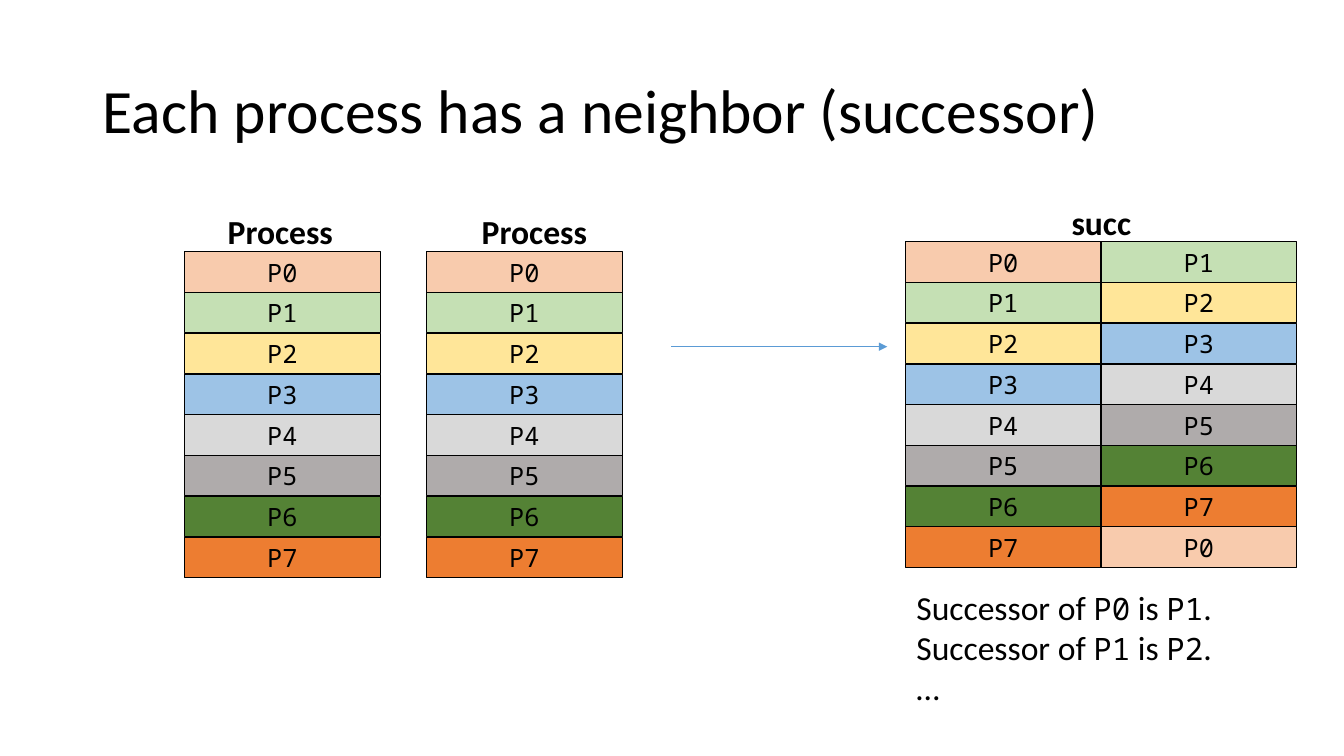
from lxml import etree
from pptx import Presentation
from pptx.dml.color import RGBColor
from pptx.enum import shapes, text
from pptx.oxml import ns
from pptx.util import Inches, Pt

# Content
TITLE = "Each process has a neighbor (successor)"
COLORS = {
    "P0": "F8CBAD", "P1": "C5E0B4", "P2": "FFE699", "P3": "9DC3E6",
    "P4": "D9D9D9", "P5": "AFABAB", "P6": "548235", "P7": "ED7D31",
    "ink": "000000", "arrow": "5B9BD5",
}
PROCESSES = [f"P{number}" for number in range(8)]
SUCCESSORS = PROCESSES[1:] + PROCESSES[:1]
COLUMNS = [  # left, top, names
    (1.83, 2.5, PROCESSES),
    (4.23, 2.5, PROCESSES),
    (8.98, 2.4, PROCESSES),
    (10.92, 2.4, SUCCESSORS),
]
HEADINGS = [  # left, top, width, wording
    (2.16, 2.04, 1.26, "Process"),
    (4.68, 2.04, 1.26, "Process"),
    (10.53, 1.95, 0.8, "succ"),
]
EXAMPLES = [
    ["Successor of ", "P0", " is ", "P1", "."],
    ["Successor of ", "P1", " is ", "P2", "."],
    ["…"],
]
SANS, MONO = "Calibri", "Noto Sans Mono"
CELL_WIDTH, CELL_HEIGHT, ROW_STEP = 1.94, 0.4, 0.404


def color(name):
    return RGBColor.from_string(COLORS[name])


def add_run(paragraph, wording, size, font=SANS, bold=False):
    run = paragraph.add_run()
    run.text = wording
    run.font.size = Pt(size)
    run.font.name = font
    run.font.bold = bold
    run.font.color.rgb = color("ink")


def add_text_frame(slide, left, top, width, height):
    box = slide.shapes.add_textbox(*map(Inches, (left, top, width, height)))
    box.text_frame.word_wrap = False
    return box.text_frame


def add_column(slide, left, top, names):
    group = slide.shapes.add_group_shape()
    for row, name in enumerate(names):
        cell = group.shapes.add_shape(
            shapes.MSO_SHAPE.RECTANGLE, Inches(left), Inches(top + row * ROW_STEP),
            Inches(CELL_WIDTH), Inches(CELL_HEIGHT))
        cell.shadow.inherit = False
        cell.fill.solid()
        cell.fill.fore_color.rgb = color(name)
        cell.line.color.rgb = color("ink")
        cell.line.width = Pt(0.75)
        cell.text_frame.vertical_anchor = text.MSO_ANCHOR.MIDDLE
        paragraph = cell.text_frame.paragraphs[0]
        paragraph.alignment = text.PP_ALIGN.CENTER
        add_run(paragraph, name, 18, MONO)


def add_arrow(slide, left, right, y):
    arrow = slide.shapes.add_connector(
        shapes.MSO_CONNECTOR.STRAIGHT, *map(Inches, (left, y, right, y)))
    arrow.line.color.rgb = color("arrow")
    arrow.line.width = Pt(0.5)
    properties = arrow._element.spPr
    etree.SubElement(properties.find(ns.qn("a:ln")), ns.qn("a:tailEnd"), type="triangle")
    etree.SubElement(properties, ns.qn("a:effectLst"))


def main():
    presentation = Presentation()
    presentation.slide_width = Inches(13.33)
    presentation.slide_height = Inches(7.5)
    slide = presentation.slides.add_slide(presentation.slide_layouts[5])

    # Title
    title = slide.shapes.title
    title.left, title.top, title.width, title.height = map(Inches, (0.92, 0.4, 11.5, 1.45))
    title.text_frame.vertical_anchor = text.MSO_ANCHOR.MIDDLE
    paragraph = title.text_frame.paragraphs[0]
    paragraph.alignment = text.PP_ALIGN.LEFT
    paragraph.line_spacing = 0.9
    add_run(paragraph, TITLE, 44)

    # Process columns with their headings
    for column in COLUMNS:
        add_column(slide, *column)
    for left, top, width, wording in HEADINGS:
        frame = add_text_frame(slide, left, top, width, 0.5)
        add_run(frame.paragraphs[0], wording, 24, bold=True)

    # Arrow to the successor table
    add_arrow(slide, 6.66, 8.8, 3.44)

    # Worked examples
    frame = add_text_frame(slide, 8.99, 5.77, 3.16, 1.31)
    for index, example in enumerate(EXAMPLES):
        paragraph = frame.add_paragraph() if index else frame.paragraphs[0]
        for wording in example:
            if wording in PROCESSES:
                add_run(paragraph, wording, 22, MONO)
            else:
                add_run(paragraph, wording, 24)

    presentation.save("out.pptx")


if __name__ == "__main__":
    main()
